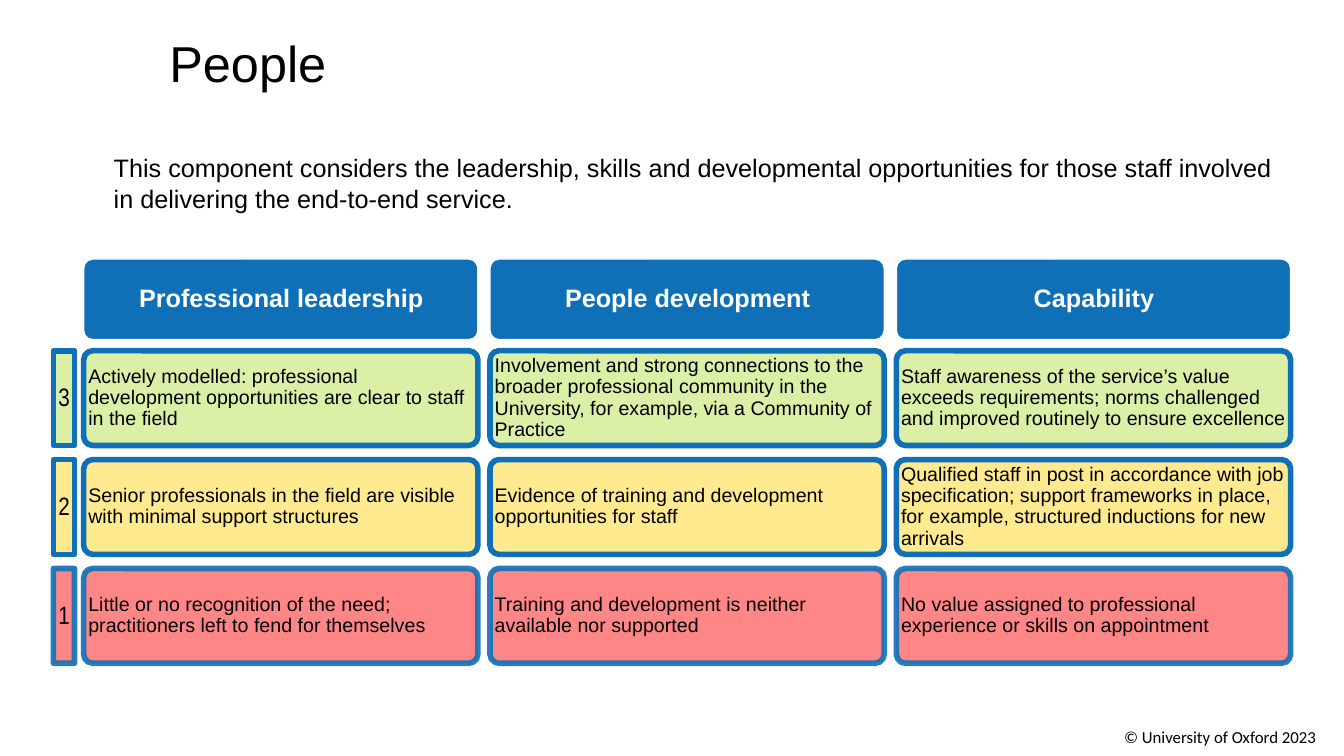
from lxml.etree import SubElement
from pptx import Presentation
from pptx.dml.color import RGBColor
from pptx.enum.shapes import MSO_SHAPE
from pptx.enum.text import MSO_ANCHOR, MSO_AUTO_SIZE, PP_ALIGN
from pptx.oxml.ns import qn
from pptx.util import Emu, Pt

PX = 9144  # 100 px to the inch
BLUE, WHITE, BLACK = "0F70B7", "FFFFFF", "000000"
RADIUS = 9
HEADS = ["Professional leadership", "People development", "Capability"]
LEVELS = [
    ("3", "D8EE9E", 100, [
        "Actively modelled: professional development opportunities are clear to staff in the field",
        "Involvement and strong connections to the broader professional community in the "
        "University, for example, via a Community of Practice",
        "Staff awareness of the service’s value exceeds requirements; norms challenged and "
        "improved routinely to ensure excellence"]),
    ("2", "FFE885", 100, [
        "Senior professionals in the field are visible with minimal support structures",
        "Evidence of training and development opportunities for staff",
        "Qualified staff in post in accordance with job specification; support frameworks in "
        "place, for example, structured inductions for new arrivals"]),
    ("1", "FF7979", 90, [
        "Little or no recognition of the need; practitioners left to fend for themselves",
        "Training and development is neither available nor supported",
        "No value assigned to professional experience or skills on appointment"]),
]


def px(n):
    return Emu(round(n * PX))


def paint(part, code, alpha=100):
    """Set a solid colour on a fill, with its opacity in percent."""
    part.solid()
    part.fore_color.rgb = RGBColor.from_string(code)
    if alpha < 100:
        tint = part._xPr.find(qn("a:solidFill"))[0]
        SubElement(tint, qn("a:alpha"), val=str(alpha * 1000))


def write(frame, text, size, code=BLACK, face="Arial", bold=False,
          align=PP_ALIGN.LEFT, lead=None):
    para = frame.paragraphs[0]
    para.alignment = align
    if lead:
        para.line_spacing = lead
    run = para.add_run()
    run.text = text
    font = run.font
    font.size, font.name, font.bold = Pt(size), face, bold
    paint(font.fill, code)


def place(shape, box):
    shape.left, shape.top, shape.width, shape.height = map(px, box)


def title(slide, box):
    shape = slide.shapes.title
    place(shape, box)
    frame = shape.text_frame
    frame.auto_size = MSO_AUTO_SIZE.NONE
    frame.vertical_anchor = MSO_ANCHOR.MIDDLE
    write(frame, "People", 36)


def note(slide, box, text, size, face="Arial", wrap=True):
    frame = slide.shapes.add_textbox(*map(px, box)).text_frame
    frame.word_wrap = wrap
    frame.vertical_anchor = MSO_ANCHOR.MIDDLE
    write(frame, text, size, face=face)


def card(slide, box, fill, edge, width, text, alpha=100, fade=100, tag=False, **style):
    """Draw one framed cell; a tag is square, all others are rounded."""
    kind = MSO_SHAPE.RECTANGLE if tag else MSO_SHAPE.ROUNDED_RECTANGLE
    shape = slide.shapes.add_shape(kind, *map(px, box))
    shape.shadow.inherit = False
    if not tag:
        shape.adjustments[0] = RADIUS / box[3]
    paint(shape.fill, fill, alpha)
    paint(shape.line.fill, edge, fade)
    shape.line.width = Pt(width)
    frame = shape.text_frame
    frame.word_wrap = True
    frame.vertical_anchor = MSO_ANCHOR.MIDDLE
    frame.margin_left = px(5 if tag else 2)
    frame.margin_right = px(5 if tag else 1)
    frame.margin_top = frame.margin_bottom = px(2)
    write(frame, text, lead=0.9, **style)


def grid(slide, box):
    """Place the level tags, column heads and cells in the box."""
    left, top, wide, high = box
    inset, gap = 30, 12
    col = (wide - inset - gap * 2) / 3
    head, row, step = 80, 94, 108
    first = top + high - row - step * 2
    lefts = [left + inset + i * (col + gap) for i in range(3)]
    for x, text in zip(lefts, HEADS):
        card(slide, (x, top, col, head), BLUE, WHITE, 1, text,
             size=18, code=WHITE, bold=True, align=PP_ALIGN.CENTER)
    for i, (level, fill, fade, texts) in enumerate(LEVELS):
        y = first + i * step
        card(slide, (left, y, 21, row), fill, BLUE, 4, level, alpha=90,
             fade=fade, tag=True, size=18, face="Arial Narrow")
        for x, text in zip(lefts, texts):
            card(slide, (x, y, col, row), fill, BLUE, 4, text, alpha=90,
                 fade=fade, size=14)


def main():
    deck = Presentation()
    deck.slide_width, deck.slide_height = px(1333), px(750)
    slide = deck.slides.add_slide(deck.slide_layouts[5])
    title(slide, (158, 26, 900, 71))
    note(slide, (103, 146, 1177, 71),
         "This component considers the leadership, skills and developmental "
         "opportunities for those staff involved in delivering the end-to-end service.", 18)
    grid(slide, (53, 257, 1227, 401))
    note(slide, (1105, 716, 229, 30), "© University of Oxford 2023", 12,
         face="Calibri", wrap=False)
    deck.save("out.pptx")


if __name__ == "__main__":
    main()
